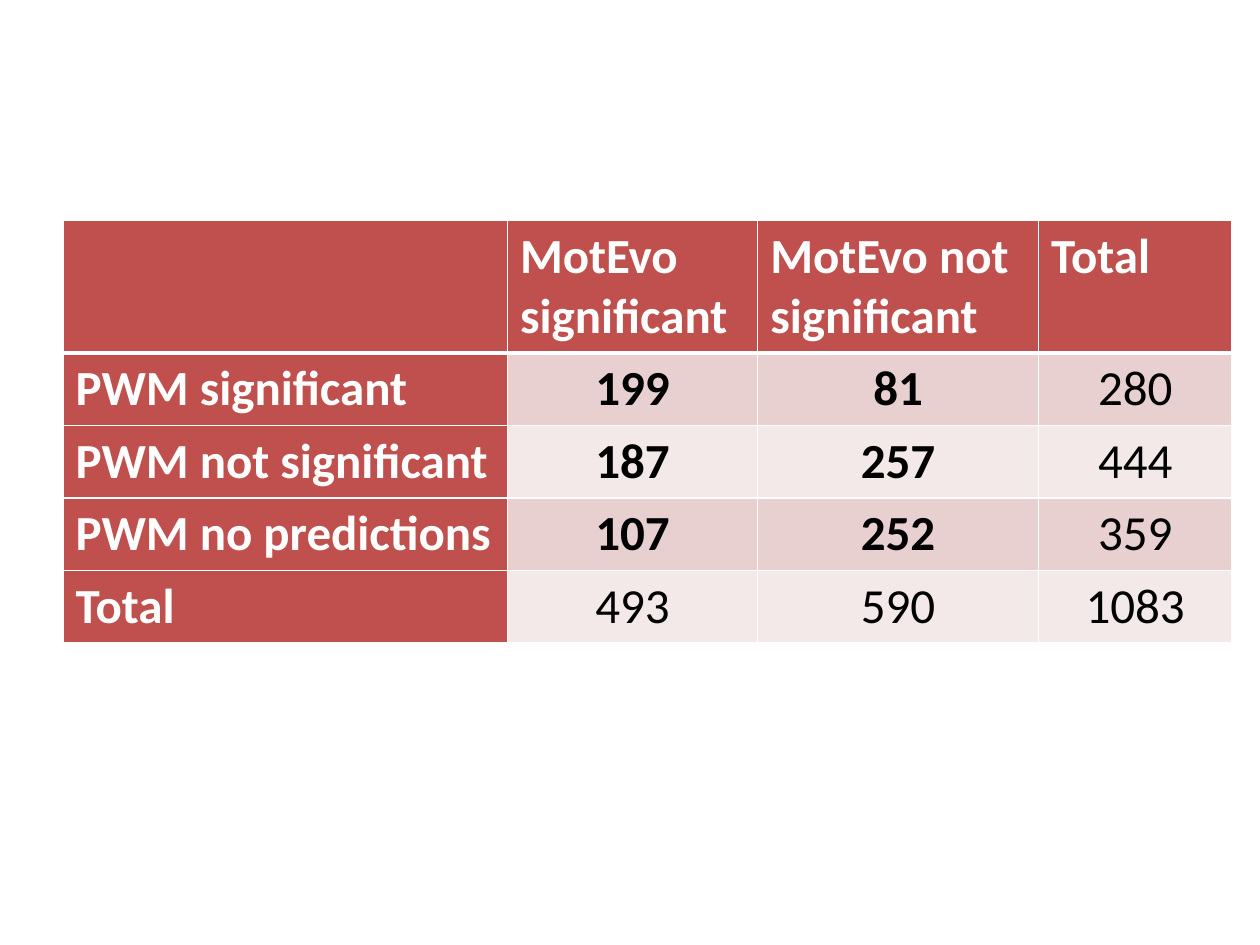
from lxml import etree
from pptx import Presentation
from pptx.dml.color import RGBColor
from pptx.enum.text import PP_ALIGN
from pptx.oxml.ns import qn
from pptx.util import Pt

CENTER = PP_ALIGN.CENTER
LEFT = PP_ALIGN.LEFT

RED, WHITE, BLACK = "C0504D", "FFFFFF", "000000"
BANDS = ["E8D0D0", "F4E9E9"]

ROWS = [
    ["", "MotEvo significant", "MotEvo not significant", "Total"],
    ["PWM significant", "199", "81", "280"],
    ["PWM not significant", "187", "257", "444"],
    ["PWM no predictions", "107", "252", "359"],
    ["Total", "493", "590", "1083"],
]
COLUMN_WIDTHS = [254, 143, 160.5, 110.5]
ROW_HEIGHTS = [75] + [41.4] * 4


def color(hex_string):
    return RGBColor.from_string(hex_string)


def set_borders(cell, **widths):
    """Draw white cell borders; widths are in points, keyed by side L, R, T, B."""
    properties = cell._tc.get_or_add_tcPr()
    for side, width in widths.items():
        line = etree.SubElement(properties, qn(f"a:ln{side}"), w=str(Pt(width)))
        fill = etree.SubElement(line, qn("a:solidFill"))
        etree.SubElement(fill, qn("a:srgbClr"), val=WHITE)


def style_cell(cell, text, fill, font_color, bold, alignment):
    cell.fill.solid()
    cell.fill.fore_color.rgb = color(fill)
    cell.text = text
    paragraph = cell.text_frame.paragraphs[0]
    paragraph.alignment = alignment
    font = paragraph.font
    font.name = "Calibri"
    font.size = Pt(28)
    font.bold = bold
    font.color.rgb = color(font_color)


def add_contingency_table(slide):
    frame = slide.shapes.add_table(
        len(ROWS), len(COLUMN_WIDTHS), Pt(36), Pt(126),
        Pt(sum(COLUMN_WIDTHS)), Pt(sum(ROW_HEIGHTS)))
    table = frame.table
    table.first_col = True
    for column, width in zip(table.columns, COLUMN_WIDTHS):
        column.width = Pt(width)
    for row, height in zip(table.rows, ROW_HEIGHTS):
        row.height = Pt(height)

    last_row, last_column = len(ROWS) - 1, len(COLUMN_WIDTHS) - 1
    for row_index, values in enumerate(ROWS):
        for column_index, text in enumerate(values):
            cell = table.cell(row_index, column_index)
            set_borders(cell, L=1, R=1,
                        T=3 if row_index == 1 else 1,
                        B=3 if row_index == 0 else 1)
            if row_index == 0 or column_index == 0:
                style_cell(cell, text, RED, WHITE, True, LEFT)
            else:
                is_total = row_index == last_row or column_index == last_column
                band = BANDS[(row_index - 1) % 2]
                style_cell(cell, text, band, BLACK, not is_total, CENTER)


def main():
    presentation = Presentation()
    presentation.slide_width = Pt(720)
    presentation.slide_height = Pt(540)
    slide = presentation.slides.add_slide(presentation.slide_layouts[6])
    add_contingency_table(slide)
    presentation.save("out.pptx")


if __name__ == "__main__":
    main()
